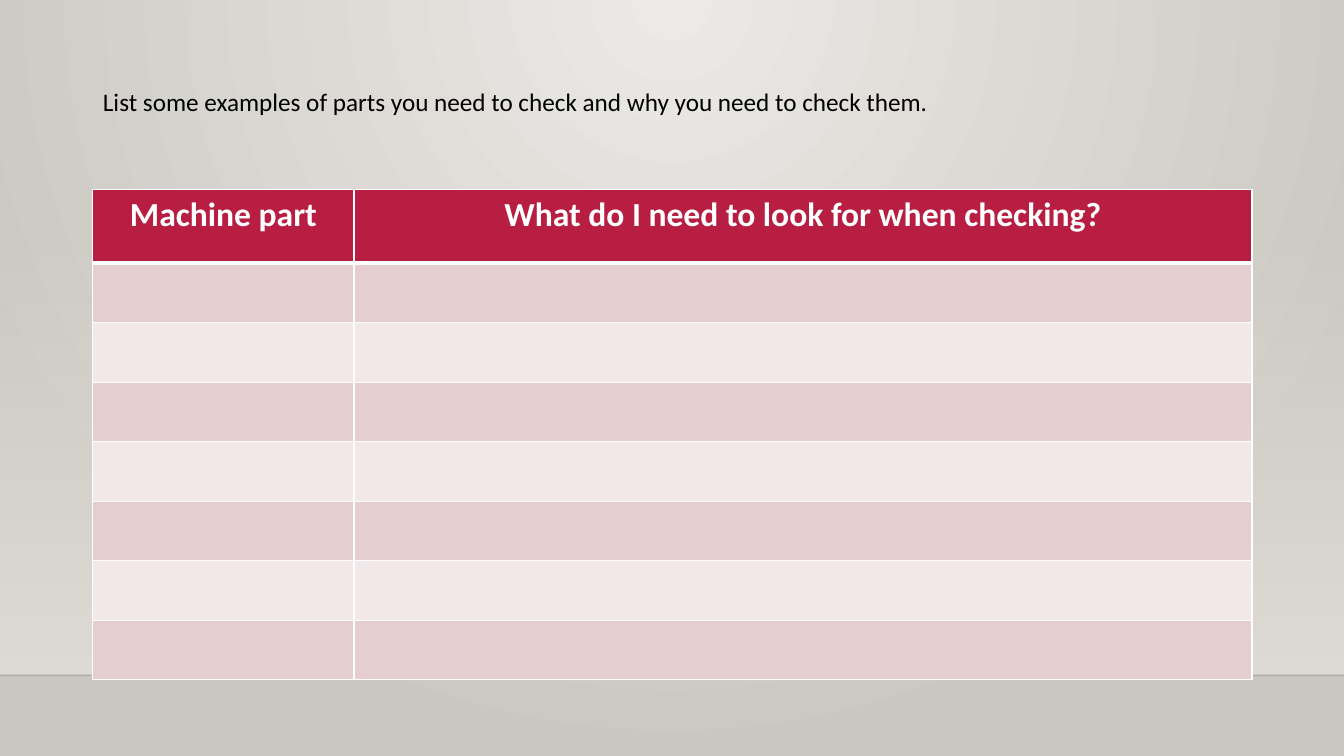
from lxml import etree
from pptx import Presentation
from pptx.dml.color import RGBColor
from pptx.enum.shapes import MSO_CONNECTOR, MSO_SHAPE
from pptx.enum.text import MSO_ANCHOR, PP_ALIGN
from pptx.oxml.ns import qn
from pptx.util import Cm, Pt

STRAIGHT = MSO_CONNECTOR.STRAIGHT
RECTANGLE = MSO_SHAPE.RECTANGLE
TOP = MSO_ANCHOR.TOP
LEFT = PP_ALIGN.LEFT
CENTER = PP_ALIGN.CENTER

FONT = "Calibri"
CRIMSON = "B71E42"
WHITE = "FFFFFF"
BANDS = ("E6CDCF", "F3E8E9")
HEADINGS = ("Machine part", "What do I need to look for when checking?")
PROMPT = "List some examples of parts you need to check and why you need to check them."


def rgb(value):
    """Turn a hex string into a colour."""
    return RGBColor.from_string(value)


def add_element(parent, tag, **attributes):
    """Append an XML element with the given attributes."""
    element = etree.SubElement(parent, qn(tag))
    for name, value in attributes.items():
        element.set(name, str(value))
    return element


def set_opacity(element, percents):
    """Give each RGB colour inside an element its opacity."""
    for color, percent in zip(element.iter(qn("a:srgbClr")), percents):
        add_element(color, "a:alpha", val=percent * 1000)


def set_gradient(fill, colors):
    """Apply a two-colour gradient to a fill."""
    fill.gradient()
    for stop, color in zip(fill.gradient_stops, colors):
        stop.color.rgb = rgb(color)


def style_text(paragraph, size, color, bold, alignment):
    """Format a paragraph and its runs."""
    paragraph.alignment = alignment
    for run in paragraph.runs:
        run.font.name = FONT
        run.font.size = Pt(size)
        run.font.bold = bold
        run.font.color.rgb = rgb(color)


def add_backdrop(slide, width, floor_top):
    """Fill the background and draw the wall shade and floor line."""
    set_gradient(slide.background.fill, ("ECEAE7", "CAC7C1"))
    gradient = next(slide.element.iter(qn("a:gradFill")))
    gradient.remove(gradient.find(qn("a:lin")))
    circle = add_element(gradient, "a:path", path="circle")
    add_element(circle, "a:fillToRect", l=43000, t=0, r=43000, b=100000)

    wall_top = Cm(5.61)
    wall = slide.shapes.add_shape(RECTANGLE, 0, wall_top, width, floor_top - wall_top)
    wall.shadow.inherit = False
    wall.line.fill.background()
    set_gradient(wall.fill, ("DFDBD5", "DFDBD5"))
    wall.fill.gradient_angle = 270
    set_opacity(wall.element.spPr, (0, 100))

    floor_line = slide.shapes.add_connector(STRAIGHT, 0, floor_top, width, floor_top)
    floor_line.line.color.rgb = rgb("000001")
    floor_line.line.width = Pt(1)
    set_opacity(floor_line.element.spPr, (20,))
    add_element(floor_line.element.spPr, "a:effectLst")


def add_prompt(slide, left, top, width, height):
    """Place the instruction in the body placeholder."""
    body = slide.placeholders[1]
    body.left, body.top, body.width, body.height = left, top, width, height
    frame = body.text_frame
    frame.text = PROMPT
    frame.vertical_anchor = TOP
    paragraph = frame.paragraphs[0]
    properties = paragraph._p.get_or_add_pPr()
    properties.set("marL", "0")
    properties.set("indent", "0")
    add_element(properties, "a:buNone")
    paragraph.line_spacing = 1.2
    paragraph.space_before = Pt(0)
    style_text(paragraph, 18, "000000", False, LEFT)


def set_borders(cell, top, bottom):
    """Draw white cell borders with the given top and bottom widths."""
    properties = cell._tc.get_or_add_tcPr()
    for side, width in (("L", 1), ("R", 1), ("T", top), ("B", bottom)):
        border = add_element(properties, f"a:ln{side}", w=Pt(width))
        solid = add_element(border, "a:solidFill")
        add_element(solid, "a:srgbClr", val=WHITE)


def add_checklist(slide, left, top, column_widths, row_heights):
    """Draw the table with its headings and empty banded rows."""
    frame = slide.shapes.add_table(
        len(row_heights), len(column_widths), left, top, sum(column_widths), sum(row_heights)
    )
    table = frame.table
    for column, width in zip(table.columns, column_widths):
        column.width = width
    for index, (row, height) in enumerate(zip(table.rows, row_heights)):
        row.height = height
        for cell in row.cells:
            set_borders(cell, 3 if index == 1 else 1, 3 if index == 0 else 1)
            cell.fill.solid()
            cell.fill.fore_color.rgb = rgb(BANDS[(index - 1) % 2] if index else CRIMSON)
    for cell, heading in zip(table.rows[0].cells, HEADINGS):
        cell.text_frame.text = heading
        style_text(cell.text_frame.paragraphs[0], 24, WHITE, True, CENTER)


def build_checklist_slide(presentation):
    """Build the slide with a prompt above a table to fill in."""
    slide = presentation.slides.add_slide(presentation.slide_layouts[1])
    title = slide.shapes.title.element
    title.getparent().remove(title)
    left = Cm(2.34)
    add_backdrop(slide, presentation.slide_width, Cm(17.02))
    add_checklist(slide, left, Cm(4.78), (Cm(6.58), Cm(22.63)), [Cm(1.85)] + [Cm(1.5)] * 7)
    add_prompt(slide, left, Cm(1.9), Cm(28.42), Cm(2.24))


def main():
    """Create and save the presentation."""
    presentation = Presentation()
    presentation.slide_width = Cm(33.87)
    presentation.slide_height = Cm(19.05)
    build_checklist_slide(presentation)
    presentation.save("out.pptx")


if __name__ == "__main__":
    main()
